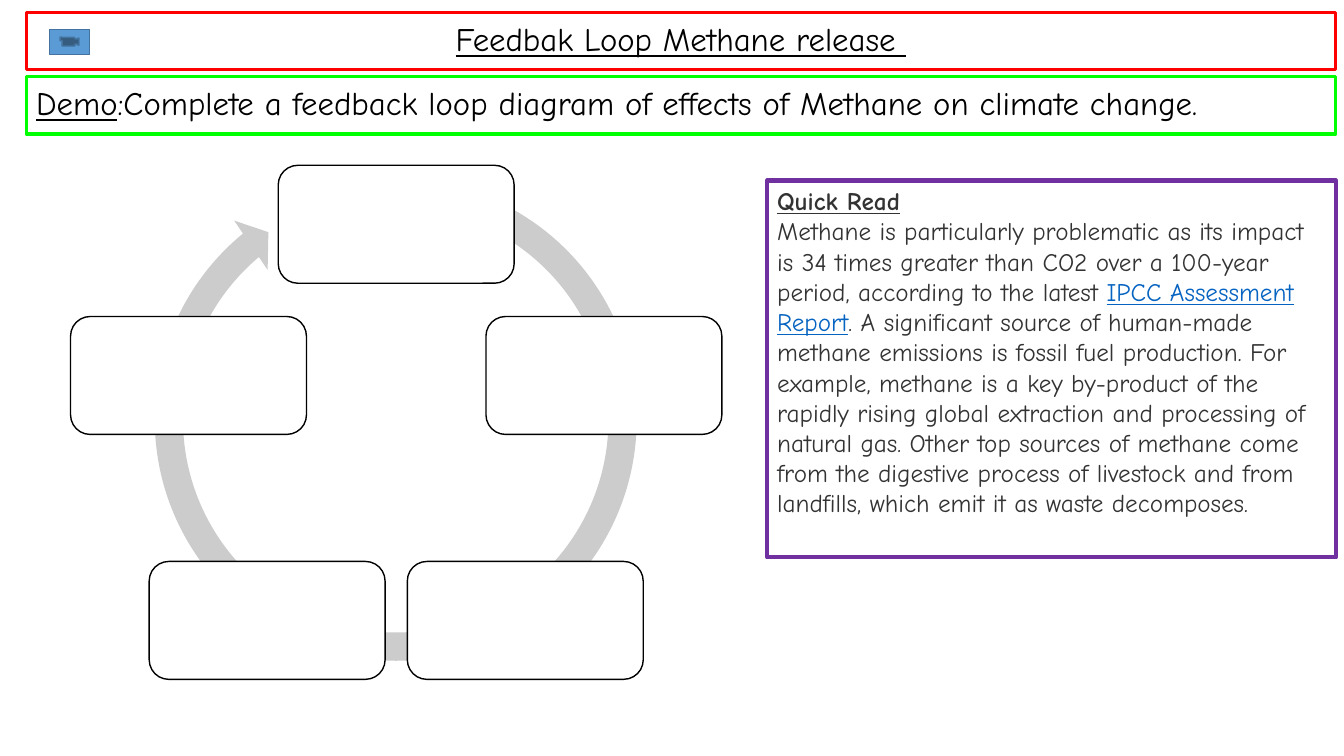
import math

import pptx
import pptx.dml.color
import pptx.enum.shapes
import pptx.enum.text
import pptx.util

SHAPE = pptx.enum.shapes.MSO_SHAPE
ALIGN = pptx.enum.text.PP_ALIGN
ANCHOR = pptx.enum.text.MSO_ANCHOR
EMU_PER_PX = 9144
COLORS = {
    "white": "FFFFFF", "black": "000000", "red": "FF0000", "green": "00FF00",
    "purple": "7030A0", "blue": "5B9BD5", "navy": "43739E", "grey": "CCCCCC",
    "text": "333333", "link": "0563C1",
}


def px(length):
    return pptx.util.Emu(round(length) * EMU_PER_PX)


def rgb(name):
    return pptx.dml.color.RGBColor.from_string(COLORS[name])


class SlideBuilder:
    font = "Comic Neue"

    def __init__(self, deck):
        self.slide = deck.slides.add_slide(deck.slide_layouts[5])

    def paint(self, shape, fill, line, weight):
        if fill:
            shape.fill.solid()
            shape.fill.fore_color.rgb = rgb(fill)
        else:
            shape.fill.background()
        if line:
            shape.line.color.rgb = rgb(line)
            shape.line.width = pptx.util.Pt(weight)
        else:
            shape.line.fill.background()

    def shape(self, kind, box, fill=None, line=None, weight=1, parent=None):
        shapes = (parent or self.slide).shapes
        shape = shapes.add_shape(kind, *map(px, box))
        shape.shadow.inherit = False
        self.paint(shape, fill, line, weight)
        return shape

    def title(self, box, runs, line):
        heading = self.slide.shapes.title
        heading.left, heading.top, heading.width, heading.height = map(px, box)
        self.paint(heading, "white", line, 2.25)
        self.text(heading, [runs], 23.4, ANCHOR.MIDDLE, ALIGN.CENTER, 0.9)

    def text(self, shape, paragraphs, size, anchor, align=ALIGN.LEFT, spacing=1.0):
        frame = shape.text_frame
        frame.word_wrap = True
        frame.auto_size = pptx.enum.text.MSO_AUTO_SIZE.NONE
        frame.vertical_anchor = anchor
        for index, runs in enumerate(paragraphs):
            paragraph = frame.add_paragraph() if index else frame.paragraphs[0]
            paragraph.alignment = align
            paragraph.line_spacing = spacing
            for wording, color, bold, underline in runs:
                run = paragraph.add_run()
                run.text = wording
                run.font.name = self.font
                run.font.size = pptx.util.Pt(size)
                run.font.color.rgb = rgb(color)
                run.font.bold = bold
                run.font.underline = underline

    def cycle(self, center, radius, stages, stage_size, arrow_box, arrow_shape):
        loop = self.slide.shapes.add_group_shape()
        arrow = self.shape(SHAPE.CIRCULAR_ARROW, arrow_box, "grey", parent=loop)
        for index, value in enumerate(arrow_shape):
            arrow.adjustments[index] = value
        width, height = stage_size
        for stage in range(stages):
            angle = math.tau * stage / stages
            left = center[0] + radius * math.sin(angle) - width / 2
            top = center[1] - radius * math.cos(angle) - height / 2
            self.shape(SHAPE.ROUNDED_RECTANGLE, (left, top, width, height),
                       "white", "black", parent=loop)


def main():
    deck = pptx.Presentation()
    deck.slide_width, deck.slide_height = px(1333), px(750)
    lesson = SlideBuilder(deck)

    lesson.title((26, 12, 1299, 57),
                 [("Feedbak Loop Methane release ", "black", False, True)], "red")
    lesson.shape(SHAPE.ACTION_BUTTON_MOVIE, (49, 29, 40, 25), "blue", "navy")

    demo = lesson.shape(SHAPE.RECTANGLE, (26, 76, 1299, 57), "white", "green", 2.25)
    lesson.text(demo, [[
        ("Demo", "black", False, True),
        (":Complete a feedback loop diagram of effects of Methane on climate change.",
         "black", False, False),
    ]], 23.4, ANCHOR.MIDDLE, spacing=0.9)

    quick_read = lesson.shape(SHAPE.RECTANGLE, (761, 179, 564, 374), None, "purple", 3)
    lesson.text(quick_read, [
        [("Quick Read", "text", True, True)],
        [("Methane is particularly problematic as its impact is 34 times greater "
          "than CO2 over a 100-year period, according to the latest ",
          "text", False, False),
         ("IPCC Assessment Report", "link", False, True),
         (". A significant source of human-made methane emissions is fossil fuel "
          "production. For example, methane is a key by-product of the rapidly "
          "rising global extraction and processing of natural gas. Other top "
          "sources of methane come from the digestive process of livestock and "
          "from landfills, which emit it as waste decomposes.",
          "text", False, False)],
    ], 18, ANCHOR.TOP)

    lesson.cycle(center=(393, 440), radius=217, stages=5, stage_size=(234, 117),
                 arrow_box=(138, 162, 509, 509),
                 arrow_shape=(0.055, 3.31, 138.2, 173.59, 0.058))

    deck.save("out.pptx")


if __name__ == "__main__":
    main()
